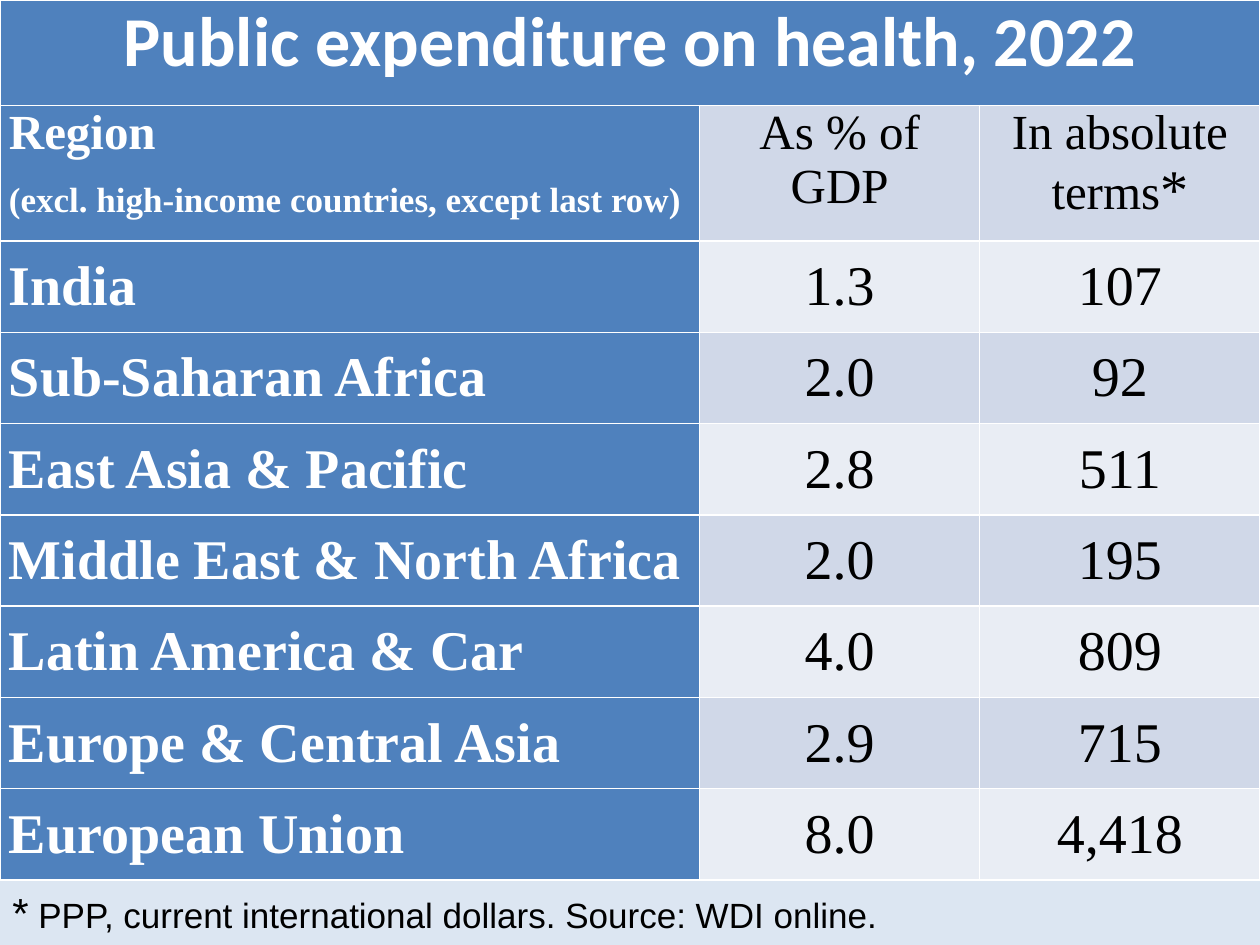
from pptx import Presentation
from pptx.dml.color import RGBColor
from pptx.enum.text import MSO_ANCHOR as Anchor, PP_ALIGN as Align
from pptx.util import Cm, Pt

WHITE = RGBColor(0xFF, 0xFF, 0xFF)
BLACK = RGBColor(0x00, 0x00, 0x00)
BLUE = RGBColor(0x4F, 0x81, 0xBD)
PALE_BLUE = RGBColor(0xDC, 0xE6, 0xF2)
BANDS = (RGBColor(0xE9, 0xED, 0xF4), RGBColor(0xD0, 0xD8, 0xE8))
SERIF = "Times New Roman"

# Each paragraph is a list of (text, size) spans.
TITLE = [[("Public expenditure on health, 2022", 40)]]
HEADINGS = [
    [[("Region", 28)], [("(excl. high-income countries, except last row)", 20)]],
    [[("As % of GDP", 28)]],
    [[("In absolute terms", 28), ("*", 32)]],
]
REGIONS = [
    ("India", "1.3", "107"),
    ("Sub-Saharan Africa", "2.0", "92"),
    ("East Asia & Pacific", "2.8", "511"),
    ("Middle East & North Africa", "2.0", "195"),
    ("Latin America & Car", "4.0", "809"),
    ("Europe & Central Asia", "2.9", "715"),
    ("European Union", "8.0", "4,418"),
]
FOOTNOTE = [[("*", 24), (" PPP, current international dollars. Source: WDI online.", 20)]]

COLUMN_WIDTHS = [Cm(14.1), Cm(5.65), Cm(5.65)]
ROW_HEIGHTS = [Cm(2.13), Cm(2.73)] + [Cm(1.84)] * len(REGIONS)


def write(frame, paragraphs, font, color, bold=False, align=Align.LEFT, gap=0):
    for index, spans in enumerate(paragraphs):
        para = frame.add_paragraph() if index else frame.paragraphs[0]
        para.alignment = align
        para.space_before = Pt(gap if index else 0)
        para.space_after = Pt(gap)
        para.font.name = font
        para.font.color.rgb = color
        para.font.bold = bold
        para.font.size = Pt(spans[0][1])
        for text, size in spans:
            span = para.add_run()
            span.text = text
            if size != spans[0][1]:
                span.font.size = Pt(size)


def fill_cell(cell, paragraphs, fill, font=SERIF, color=BLACK, bold=False,
              align=Align.CENTER, anchor=Anchor.TOP):
    cell.fill.solid()
    cell.fill.fore_color.rgb = fill
    cell.margin_left = cell.margin_right = Cm(0.18)
    cell.margin_top = cell.margin_bottom = 0
    cell.vertical_anchor = anchor
    write(cell.text_frame, paragraphs, font, color, bold, align, gap=6)


deck = Presentation()
deck.slide_width, deck.slide_height = Cm(25.4), Cm(19.05)
page = deck.slides.add_slide(deck.slide_layouts[6])
page.background.fill.solid()
page.background.fill.fore_color.rgb = PALE_BLUE

table_height = sum(ROW_HEIGHTS)
table = page.shapes.add_table(len(ROW_HEIGHTS), len(COLUMN_WIDTHS), 0, 0,
                              deck.slide_width, table_height).table
table.first_col = True
for column, width in zip(table.columns, COLUMN_WIDTHS):
    column.width = width
for row, height in zip(table.rows, ROW_HEIGHTS):
    row.height = height

table.cell(0, 0).merge(table.cell(0, len(COLUMN_WIDTHS) - 1))
fill_cell(table.cell(0, 0), TITLE, BLUE, font="Calibri", color=WHITE, bold=True)

body = [HEADINGS] + [[[[(text, 32)]] for text in region] for region in REGIONS]
for r, contents in enumerate(body, start=1):
    anchor = Anchor.TOP if r == 1 else Anchor.MIDDLE
    for c, paragraphs in enumerate(contents):
        cell = table.cell(r, c)
        if c == 0:
            fill_cell(cell, paragraphs, BLUE, color=WHITE, bold=True,
                      align=Align.LEFT, anchor=anchor)
        else:
            fill_cell(cell, paragraphs, BANDS[r % 2], anchor=anchor)

box = page.shapes.add_textbox(0, table_height, deck.slide_width, Cm(1.28))
box.text_frame.word_wrap = True
write(box.text_frame, FOOTNOTE, "Arial", BLACK)

deck.save("out.pptx")
